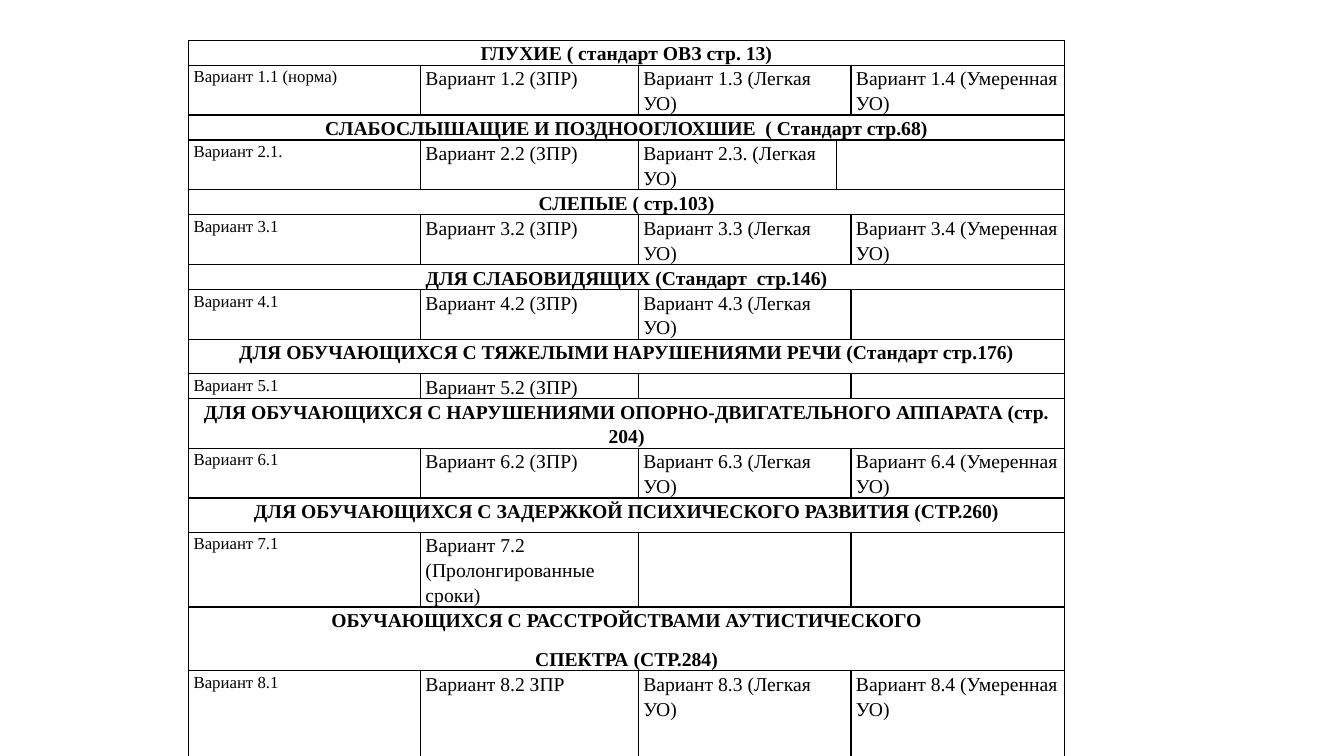
"""Builds a slide with a table of programme variants for each group of learners."""
from typing import NamedTuple

from lxml import etree
from pptx import Presentation, util as u
from pptx.dml.color import RGBColor
from pptx.enum import text
from pptx.oxml import ns

PX = 9144
BLACK = RGBColor(0, 0, 0)
FONT = "Times New Roman"
COLS = (230, 216, 197, 14, 212)
WIDE = ((0, 0), (1, 1), (2, 3), (4, 4))
SPLIT = ((0, 0), (1, 1), (2, 2), (3, 4))


class Group(NamedTuple):
    head: str
    items: tuple[str, ...]
    top: int = 23
    high: int = 48
    spans: tuple[tuple[int, int], ...] = WIDE


GROUPS = (
    Group("ГЛУХИЕ ( стандарт ОВЗ стр. 13)",
          ("Вариант 1.1 (норма)", "Вариант 1.2 (ЗПР)",
           "Вариант 1.3 (Легкая УО)", "Вариант 1.4 (Умеренная УО)")),
    Group("СЛАБОСЛЫШАЩИЕ И ПОЗДНООГЛОХШИЕ  ( Стандарт стр.68)",
          ("Вариант 2.1.", "Вариант 2.2 (ЗПР)", "Вариант 2.3. (Легкая УО)", ""),
          spans=SPLIT),
    Group("СЛЕПЫЕ ( стр.103)",
          ("Вариант 3.1", "Вариант 3.2 (ЗПР)",
           "Вариант 3.3 (Легкая УО)", "Вариант 3.4 (Умеренная УО)")),
    Group("ДЛЯ СЛАБОВИДЯЩИХ (Стандарт  стр.146)",
          ("Вариант 4.1", "Вариант 4.2 (ЗПР)", "Вариант 4.3 (Легкая УО)", "")),
    Group("ДЛЯ ОБУЧАЮЩИХСЯ С ТЯЖЕЛЫМИ НАРУШЕНИЯМИ РЕЧИ (Стандарт стр.176)",
          ("Вариант 5.1", "Вариант 5.2 (ЗПР)", "", ""), top=34, high=23),
    Group("ДЛЯ ОБУЧАЮЩИХСЯ С НАРУШЕНИЯМИ ОПОРНО-ДВИГАТЕЛЬНОГО АППАРАТА (стр. 204)",
          ("Вариант 6.1", "Вариант 6.2 (ЗПР)",
           "Вариант 6.3 (Легкая УО)", "Вариант 6.4 (Умеренная УО)"), top=48),
    Group("ДЛЯ ОБУЧАЮЩИХСЯ С ЗАДЕРЖКОЙ ПСИХИЧЕСКОГО РАЗВИТИЯ (СТР.260)",
          ("Вариант 7.1", "Вариант 7.2 (Пролонгированные сроки)", "", ""),
          top=34, high=72),
    Group("ОБУЧАЮЩИХСЯ С РАССТРОЙСТВАМИ АУТИСТИЧЕСКОГО\nСПЕКТРА (СТР.284)",
          ("Вариант 8.1", "Вариант 8.2 ЗПР",
           "Вариант 8.3 (Легкая УО)", "Вариант 8.4 (Умеренная УО)"),
          top=60, high=117),
)


def frame(cell) -> None:
    """Gives a cell clear fill, tight margins and black edges."""
    cell.margin_left = cell.margin_right = 5 * PX
    cell.margin_top = cell.margin_bottom = 0
    cell.fill.background()
    props = cell._tc.get_or_add_tcPr()
    for spot, side in enumerate(("lnL", "lnR", "lnT", "lnB")):
        line = etree.Element(ns.qn(f"a:{side}"), w=str(u.Pt(1)))
        fill = etree.SubElement(line, ns.qn("a:solidFill"))
        etree.SubElement(fill, ns.qn("a:srgbClr"), val=str(BLACK))
        props.insert(spot, line)


def write(cell, words: str, size: int, head: bool = False) -> None:
    """Puts text in a cell and sets its type."""
    cell.text_frame.text = words
    for para in cell.text_frame.paragraphs:
        para.line_spacing = 1.15
        para.space_after = u.Pt(10)
        para.alignment = text.PP_ALIGN.CENTER if head else text.PP_ALIGN.LEFT
        para.font.name = FONT
        para.font.size = u.Pt(size)
        para.font.bold = head
        para.font.color.rgb = BLACK


def place(table, row: int, first: int, last: int):
    """Returns the cell that covers the columns from first to last."""
    cell = table.cell(row, first)
    if last > first:
        cell.merge(table.cell(row, last))
    return cell


def draw(table, row: int, group: Group) -> None:
    """Fills the heading row and the variant row of a group."""
    table.rows[row].height = group.top * PX
    table.rows[row + 1].height = group.high * PX
    write(place(table, row, 0, len(COLS) - 1), group.head, 14, head=True)
    for (first, last), item in zip(group.spans, group.items):
        cell = place(table, row + 1, first, last)
        write(cell, item, 14 if first else 12)


def main() -> None:
    """Makes the deck and saves it."""
    deck = Presentation()
    deck.slide_width, deck.slide_height = 1333 * PX, 750 * PX
    slide = deck.slides.add_slide(deck.slide_layouts[6])
    table = slide.shapes.add_table(
        2 * len(GROUPS), len(COLS), 187 * PX, 40 * PX, 868 * PX, 742 * PX).table
    table.first_row = table.horz_banding = False
    for col, wide in zip(table.columns, COLS):
        col.width = wide * PX
    for cell in table.iter_cells():
        frame(cell)
    for spot, group in enumerate(GROUPS):
        draw(table, 2 * spot, group)
    deck.save("out.pptx")


if __name__ == "__main__":
    main()
